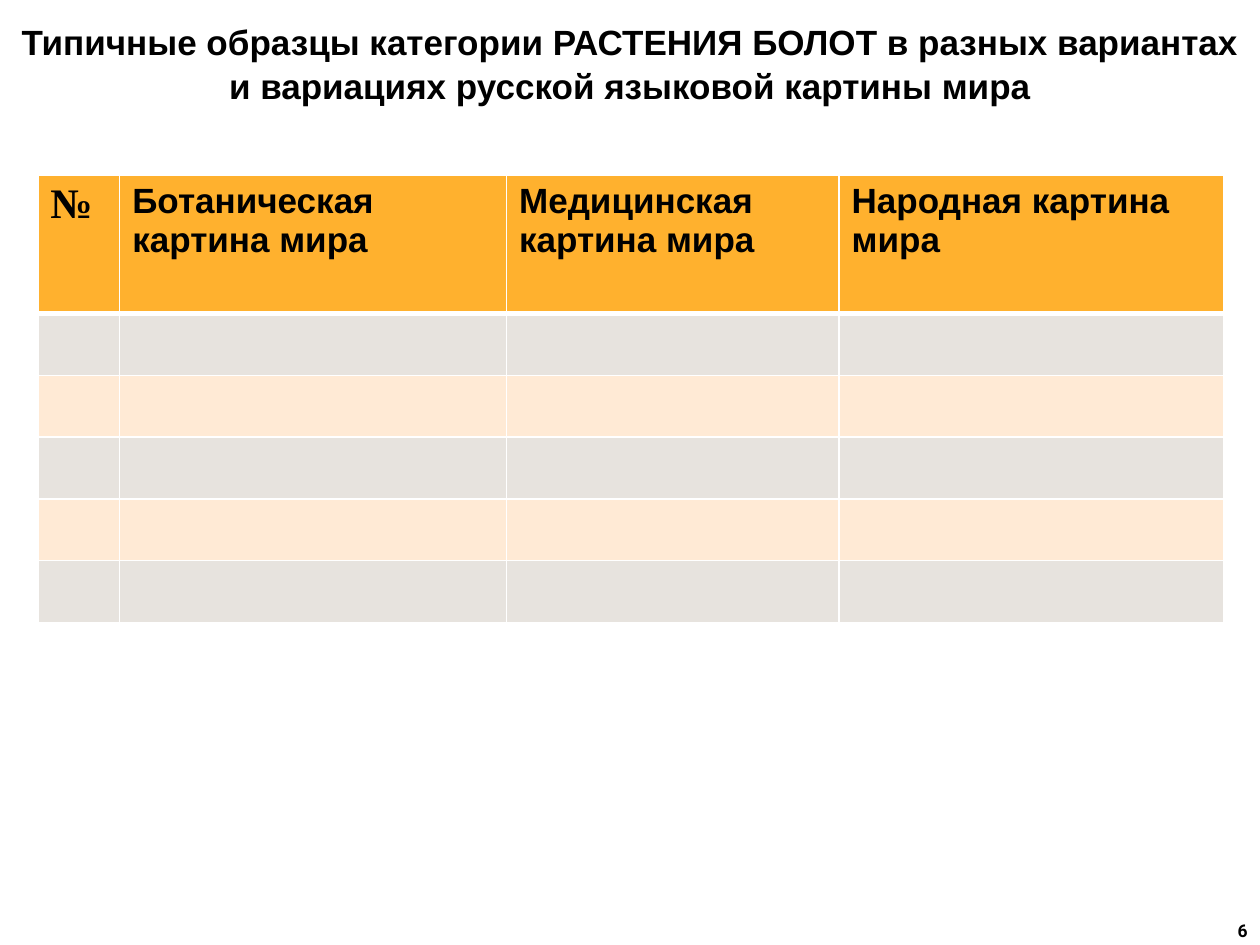
from lxml import etree
from pptx import Presentation
from pptx.dml.color import RGBColor
from pptx.enum.text import MSO_ANCHOR, MSO_AUTO_SIZE, PP_ALIGN
from pptx.oxml.ns import qn
from pptx.util import Inches, Pt

CENTER, LEFT, RIGHT = PP_ALIGN.CENTER, PP_ALIGN.LEFT, PP_ALIGN.RIGHT
MIDDLE = MSO_ANCHOR.MIDDLE
FIXED = MSO_AUTO_SIZE.NONE
WIDTH, HEIGHT = 10, 7.5

TITLE = ("Типичные образцы категории РАСТЕНИЯ БОЛОТ в разных вариантах "
         "и вариациях русской языковой картины мира")
HEADS = ["№", "Ботаническая картина мира", "Медицинская картина мира",
         "Народная картина мира"]
COLS = [0.65, 3.07, 2.64, 3.05]
ROWS = [1.1] + [0.49] * 5
HEAD, BANDS, WHITE = "FFB12E", ["E7E3DE", "FFEAD5"], "FFFFFF"


def color(code):
    return RGBColor.from_string(code)


class Page:
    """Holds the text style and the current slide."""
    ink = "000000"
    face = "Arial"
    size = 20

    def __init__(self, deck):
        self.slide = deck.slides.add_slide(deck.slide_layouts[5])

    def label(self, frame, text, align=LEFT, size=None, face=None):
        frame.text = text
        para = frame.paragraphs[0]
        para.alignment = align
        for run in para.runs:
            font = run.font
            font.size = Pt(size or self.size)
            font.name = face or self.face
            font.bold = True
            font.color.rgb = color(self.ink)

    def title(self, text, high):
        shape = self.slide.shapes.title
        shape.left = shape.top = 0
        shape.width, shape.height = Inches(WIDTH), Inches(high)
        frame = shape.text_frame
        frame.word_wrap = True
        frame.auto_size = FIXED
        frame.vertical_anchor = MIDDLE
        self.label(frame, text, CENTER)
        frame.paragraphs[0].line_spacing = 1.05

    def edge(self, cell, base):
        """Draw white cell borders; base is the width of the lower one."""
        props = cell._tc.get_or_add_tcPr()
        widths = {"a:lnL": 1, "a:lnR": 1, "a:lnT": 1, "a:lnB": base}
        for spot, (tag, width) in enumerate(widths.items()):
            line = etree.Element(qn(tag), w=str(Pt(width)))
            fill = etree.SubElement(line, qn("a:solidFill"))
            etree.SubElement(fill, qn("a:srgbClr"), val=WHITE)
            props.insert(spot, line)

    def table(self, left, top, heads):
        table = self.slide.shapes.add_table(
            len(ROWS), len(COLS), Inches(left), Inches(top),
            Inches(sum(COLS)), Inches(sum(ROWS))).table
        for col, width in zip(table.columns, COLS):
            col.width = Inches(width)
        for num, (row, high) in enumerate(zip(table.rows, ROWS)):
            row.height = Inches(high)
            for cell in row.cells:
                cell.fill.solid()
                cell.fill.fore_color.rgb = color(
                    BANDS[(num - 1) % 2] if num else HEAD)
                self.edge(cell, 1 if num else 3)
        for num, text in enumerate(heads):
            look = {} if num else {"size": 24, "face": "Times New Roman"}
            self.label(table.cell(0, num).text_frame, text, **look)

    def number(self, text, wide, high):
        """Put the page number in the lower right corner."""
        box = self.slide.shapes.add_textbox(
            Inches(WIDTH - wide), Inches(HEIGHT - high),
            Inches(wide), Inches(high))
        box.text_frame.word_wrap = True
        self.label(box.text_frame, text, RIGHT, 10, "Roboto")


def main():
    deck = Presentation()
    deck.slide_width, deck.slide_height = Inches(WIDTH), Inches(HEIGHT)
    page = Page(deck)
    page.title(TITLE, 0.99)
    page.table(0.3, 1.39, HEADS)
    page.number("6", 2.08, 0.25)
    deck.save("out.pptx")


if __name__ == "__main__":
    main()
